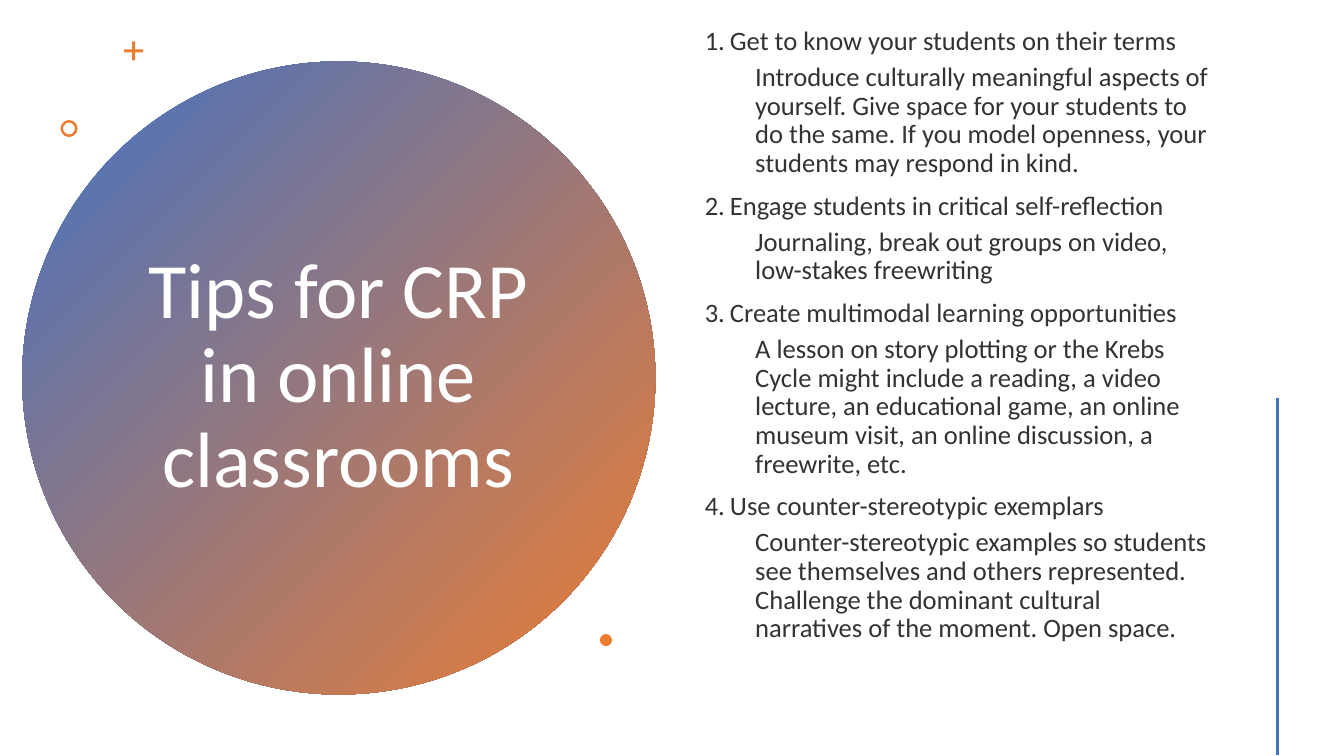
from dataclasses import dataclass

from lxml import etree
from pptx import Presentation
from pptx.dml.color import RGBColor
from pptx.enum.shapes import MSO_CONNECTOR, MSO_SHAPE
from pptx.enum.text import MSO_ANCHOR, MSO_AUTO_SIZE, PP_ALIGN
from pptx.oxml.ns import qn
from pptx.shapes.autoshape import Shape
from pptx.slide import Slide
from pptx.text.text import _Paragraph
from pptx.util import Inches, Pt

OVAL, CROSS, DONUT = MSO_SHAPE.OVAL, MSO_SHAPE.CROSS, MSO_SHAPE.DONUT
STRAIGHT = MSO_CONNECTOR.STRAIGHT
MIDDLE = MSO_ANCHOR.MIDDLE
NO_AUTOFIT = MSO_AUTO_SIZE.NONE
LEFT, CENTER = PP_ALIGN.LEFT, PP_ALIGN.CENTER

FONT = "Calibri"
COLORS = {"blue": "4472C4", "orange": "ED7D31", "white": "FFFFFF", "body": "333333"}


@dataclass(frozen=True)
class Mark:
    preset: MSO_SHAPE
    left: float
    top: float
    size: float
    adjustment: float | None = None


@dataclass(frozen=True)
class Tip:
    heading: str
    detail: str


MARKS = [
    Mark(CROSS, 1.23, 0.41, 0.19, 0.42),
    Mark(DONUT, 0.6, 1.19, 0.17, 0.15),
    Mark(OVAL, 5.95, 6.29, 0.12),
]

TIPS = [
    Tip(
        "Get to know your students on their terms",
        "Introduce culturally meaningful aspects of yourself. Give space for your "
        "students to do the same. If you model openness, your students may respond in kind.",
    ),
    Tip(
        "Engage students in critical self-reflection",
        "Journaling, break out groups on video, low-stakes freewriting",
    ),
    Tip(
        "Create multimodal learning opportunities",
        "A lesson on story plotting or the Krebs Cycle might include a reading, a video "
        "lecture, an educational game, an online museum visit, an online discussion, "
        "a freewrite, etc.",
    ),
    Tip(
        "Use counter-stereotypic exemplars",
        "Counter-stereotypic examples so students see themselves and others represented. "
        "Challenge the dominant cultural narratives of the moment. Open space.",
    ),
]


def rgb(name: str) -> RGBColor:
    return RGBColor.from_string(COLORS[name])


def write(paragraph: _Paragraph, text: str, *, size: float, color: str,
          align: PP_ALIGN = LEFT, before: float = 0, level: int = 0,
          margin: float = 0, indent: float = 0, numbered: bool = False) -> None:
    paragraph.alignment = align
    paragraph.level = level
    paragraph.line_spacing = 0.9
    paragraph.space_before = Pt(before)
    run = paragraph.add_run()
    run.text = text
    run.font.name = FONT
    run.font.size = Pt(size)
    run.font.color.rgb = rgb(color)
    properties = paragraph._p.get_or_add_pPr()
    properties.set("marL", str(Inches(margin)))
    properties.set("indent", str(Inches(indent)))
    if numbered:
        etree.SubElement(properties, qn("a:buAutoNum"), type="arabicPeriod")
    else:
        etree.SubElement(properties, qn("a:buNone"))


def place(holder: Shape, left: float, top: float, width: float, height: float) -> None:
    holder.left, holder.top = Inches(left), Inches(top)
    holder.width, holder.height = Inches(width), Inches(height)
    holder.text_frame.word_wrap = True
    holder.text_frame.auto_size = NO_AUTOFIT
    holder.text_frame.vertical_anchor = MIDDLE


def add_title_circle(slide: Slide) -> None:
    circle = slide.shapes.add_shape(OVAL, Inches(0.22), Inches(0.61), Inches(6.28), Inches(6.28))
    circle.shadow.inherit = False
    circle.line.fill.background()
    circle.fill.gradient()
    circle.fill.gradient_angle = 315
    for stop, color, position in zip(circle.fill.gradient_stops, ("blue", "orange"), (0, 1)):
        stop.color.rgb = rgb(color)
        stop.position = position
    slide.shapes._spTree.insert(2, circle._element)


def add_title(slide: Slide) -> None:
    title = slide.shapes.title
    place(title, 1.36, 1.41, 3.99, 4.67)
    write(title.text_frame.paragraphs[0], "Tips for CRP in online classrooms",
          size=56, color="white", align=CENTER)


def add_tips(slide: Slide) -> None:
    body = slide.placeholders[1]
    place(body, 6.89, 0.57, 5.22, 6.38)
    frame = body.text_frame
    frame.margin_bottom = Inches(0.91)
    for number, tip in enumerate(TIPS):
        heading = frame.add_paragraph() if number else frame.paragraphs[0]
        write(heading, tip.heading, size=19, color="body", before=10,
              margin=0.25, indent=-0.25, numbered=True)
        write(frame.add_paragraph(), tip.detail, size=19, color="body", before=5,
              level=1, margin=0.5)


def add_mark(slide: Slide, mark: Mark) -> None:
    ornament = slide.shapes.add_shape(mark.preset, Inches(mark.left), Inches(mark.top),
                                      Inches(mark.size), Inches(mark.size))
    ornament.shadow.inherit = False
    ornament.line.fill.background()
    ornament.fill.solid()
    ornament.fill.fore_color.rgb = rgb("orange")
    if mark.adjustment is not None:
        ornament.adjustments[0] = mark.adjustment


def add_edge_rule(slide: Slide) -> None:
    rule = slide.shapes.add_connector(STRAIGHT, Inches(12.67), Inches(3.95),
                                      Inches(12.67), Inches(7.49))
    rule.line.color.rgb = rgb("blue")
    rule.line.width = Pt(2)
    etree.SubElement(rule._element.spPr, qn("a:effectLst"))


def main() -> None:
    deck = Presentation()
    deck.slide_width, deck.slide_height = Inches(13.33), Inches(7.5)
    slide = deck.slides.add_slide(deck.slide_layouts[1])
    add_title_circle(slide)
    add_title(slide)
    add_tips(slide)
    for mark in MARKS:
        add_mark(slide, mark)
    add_edge_rule(slide)
    deck.save("out.pptx")


if __name__ == "__main__":
    main()
